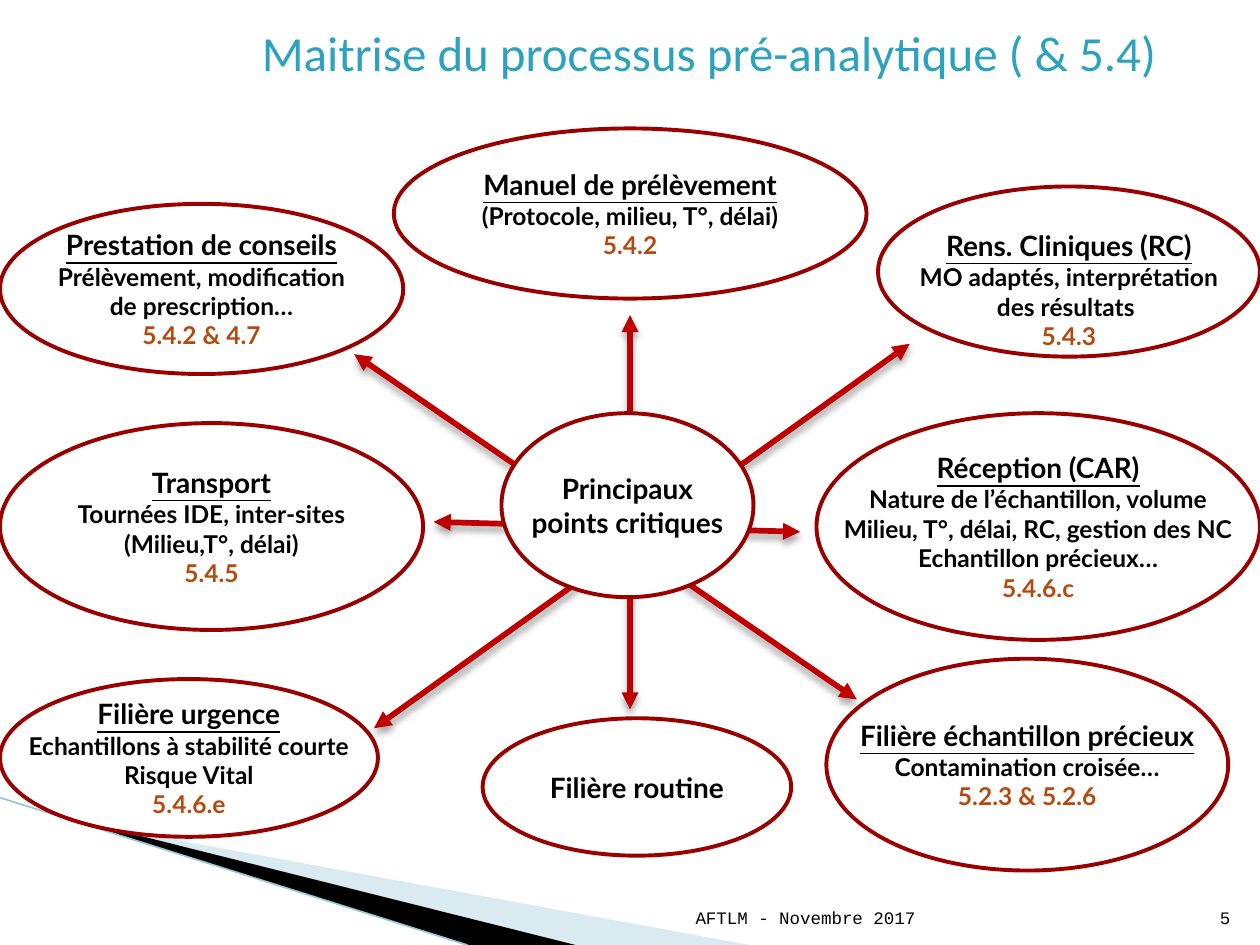
from dataclasses import dataclass
from lxml.etree import SubElement
from pptx import Presentation
from pptx.dml.color import RGBColor
from pptx.enum.shapes import MSO_CONNECTOR, MSO_SHAPE
from pptx.enum.text import MSO_ANCHOR, PP_ALIGN
from pptx.oxml.ns import qn
from pptx.util import Cm, Pt


@dataclass(frozen=True)
class Theme:
    white: str = "FFFFFF"
    black: str = "000000"
    title: str = "2DA2BF"
    outline: str = "990000"
    arrow: str = "C00000"
    clause: str = "B54A10"
    wave: str = "A0CBDC"
    wave_edge: str = "97C5D8"
    title_size: int = 28
    heading_size: int = 16
    detail_size: int = 14
    footer_size: int = 10
    title_font: str = "Calibri"
    body_font: str = "Lato"
    footer_font: str = "Courier New"


@dataclass(frozen=True)
class Box:
    left: float
    top: float
    width: float
    height: float

    def point(self, x, y):
        return Cm(self.left + x), Cm(self.top + y)

    def inner(self, x, y, width, height):
        return Box(self.left + x, self.top + y, width, height)

    def bounds(self):
        return Cm(self.left), Cm(self.top), Cm(self.width), Cm(self.height)


THEME = Theme()

CRITICAL_POINTS = [
    ((0, 1.61, 8.13, 3.43), "Prestation de conseils",
     ["Prélèvement, modification", "de prescription…"], "5.4.2 & 4.7"),
    ((7.94, 0.09, 9.53, 3.43), "Manuel de prélèvement",
     ["(Protocole, milieu, T°, délai)"], "5.4.2"),
    ((17.7, 1.26, 7.7, 3.43), "Rens. Cliniques (RC)",
     ["MO adaptés, interprétation", "des résultats "], "5.4.3"),
    ((16.66, 10.78, 8.1, 4.27), "Filière échantillon précieux",
     ["Contamination croisée…"], "5.2.3 & 5.2.6"),
    ((16.46, 5.83, 8.94, 4.57), "Réception (CAR)",
     ["Nature de l’échantillon, volume", "Milieu, T°, délai, RC, gestion des NC",
      "Echantillon précieux…"], "5.4.6.c"),
    ((0, 11.19, 7.62, 3.18), "Filière urgence",
     ["Echantillons à stabilité courte", "Risque Vital"], "5.4.6.e"),
    ((0, 6.03, 8.53, 4.17), "Transport",
     ["Tournées IDE, inter-sites", "(Milieu,T°, délai)"], "5.4.5"),
]
PLAIN_OVALS = [
    ((10.11, 5.83, 5.08, 3.71), ["Principaux", "points critiques"]),
    ((9.73, 11.98, 6.22, 2.77), ["Filière routine"]),
]
ARROWS = [
    ((12.7, 3.85), (12.7, 11.8)),
    ((8.74, 8.02), (16.13, 8.22)),
    ((7.54, 12.18), (18.34, 4.43)),
    ((7.14, 4.64), (17.27, 11.6)),
]
LOWERED_HEADING = "Rens. Cliniques (RC)"


def color(value):
    return RGBColor.from_string(value)


def style_font(font, name, size, value):
    font.name = name
    font.size = Pt(size)
    font.color.rgb = color(value)


def add_label(slide, box, text, font_name, size, value, alignment, anchor):
    shape = slide.shapes.add_textbox(*box.bounds())
    text_frame = shape.text_frame
    text_frame.word_wrap = True
    text_frame.vertical_anchor = anchor
    text_frame.text = text
    paragraph = text_frame.paragraphs[0]
    paragraph.alignment = alignment
    style_font(paragraph.runs[0].font, font_name, size, value)


def add_line(slide, start, end, value, width):
    connector = slide.shapes.add_connector(MSO_CONNECTOR.STRAIGHT, *start, *end)
    connector.line.color.rgb = color(value)
    connector.line.width = Pt(width)
    effects = SubElement(connector.element.spPr, qn("a:effectLst"))
    return connector, effects


def add_double_arrow(slide, start, end):
    connector, effects = add_line(slide, start, end, THEME.arrow, 3.25)
    line = connector.line._get_or_add_ln()
    for end_tag in ("a:headEnd", "a:tailEnd"):
        SubElement(line, qn(end_tag), type="triangle")
    shadow = SubElement(effects, qn("a:outerShdw"), blurRad=str(Pt(4)),
                        dist=str(Pt(3)), dir="5400000", rotWithShape="0")
    shade = SubElement(shadow, qn("a:srgbClr"), val=THEME.black)
    SubElement(shade, qn("a:alpha"), val="35000")


def add_polygon(slide, box, points, value, opacity=100):
    start, *others = [box.point(*point) for point in points]
    builder = slide.shapes.build_freeform(*start)
    builder.add_line_segments(others)
    shape = builder.convert_to_shape()
    shape.shadow.inherit = False
    shape.fill.solid()
    shape.fill.fore_color.rgb = color(value)
    shape.line.fill.background()
    if opacity < 100:
        fill = shape.element.spPr.find(qn("a:solidFill"))
        SubElement(fill[0], qn("a:alpha"), val=str(opacity * 1000))


def add_oval(slide, box, lines):
    shape = slide.shapes.add_shape(MSO_SHAPE.OVAL, *box.bounds())
    shape.shadow.inherit = False
    shape.fill.solid()
    shape.fill.fore_color.rgb = color(THEME.white)
    shape.line.color.rgb = color(THEME.outline)
    shape.line.width = Pt(2.25)
    text_frame = shape.text_frame
    text_frame.word_wrap = False
    text_frame.vertical_anchor = MSO_ANCHOR.MIDDLE
    text_frame.text = "\n".join(text for text, *_ in lines)
    for paragraph, (_, size, value, underline) in zip(text_frame.paragraphs, lines):
        paragraph.alignment = PP_ALIGN.CENTER
        font = paragraph.runs[0].font
        style_font(font, THEME.body_font, size, value)
        font.bold = True
        font.underline = underline
    return shape


def add_waves(slide, box):
    add_polygon(slide, box, [(1.4, 0.54), (15.11, 3.05), (11.58, 3.05), (1.4, 0.51)],
                THEME.wave, 40)
    add_polygon(slide, box, [(1.35, 0.48), (11.6, 3.05), (9.45, 3.05), (1.37, 0.51)],
                THEME.black)
    add_line(slide, box.point(0, 0.08), box.point(9.42, 3.05), THEME.wave_edge, 0.95)


def add_diagram(slide, box):
    for start, end in ARROWS:
        add_double_arrow(slide, box.point(*start), box.point(*end))
    for place, heading, details, clause in CRITICAL_POINTS:
        lines = [(heading, THEME.heading_size, THEME.black, True)]
        lines += [(detail, THEME.detail_size, THEME.black, False) for detail in details]
        lines.append((clause, THEME.detail_size, THEME.clause, False))
        shape = add_oval(slide, box.inner(*place), lines)
        if heading == LOWERED_HEADING:
            shape.text_frame.margin_top = Cm(0.85)
    for place, texts in PLAIN_OVALS:
        add_oval(slide, box.inner(*place),
                 [(text, THEME.heading_size, THEME.black, False) for text in texts])


def add_footer(slide, box):
    for text, left, width in (("5", 11.86, 1.02), ("AFTLM - Novembre 2017", 0, 6.53)):
        add_label(slide, box.inner(left, 0, width, box.height), text, THEME.footer_font,
                  THEME.footer_size, THEME.black, PP_ALIGN.RIGHT, MSO_ANCHOR.BOTTOM)


def main():
    presentation = Presentation()
    presentation.slide_width, presentation.slide_height = Cm(25.4), Cm(19.05)
    slide = presentation.slides.add_slide(presentation.slide_layouts[6])
    add_waves(slide, Box(0, 16, 15.11, 3.05))
    add_diagram(slide, Box(0, 2.5, 25.4, 15.05))
    add_label(slide, Box(3.18, 0.33, 22.22, 1.45),
              "Maitrise du processus pré-analytique ( & 5.4)", THEME.title_font,
              THEME.title_size, THEME.title, PP_ALIGN.CENTER, MSO_ANCHOR.TOP)
    add_footer(slide, Box(12.17, 17.81, 12.88, 1.02))
    presentation.save("out.pptx")


if __name__ == "__main__":
    main()
